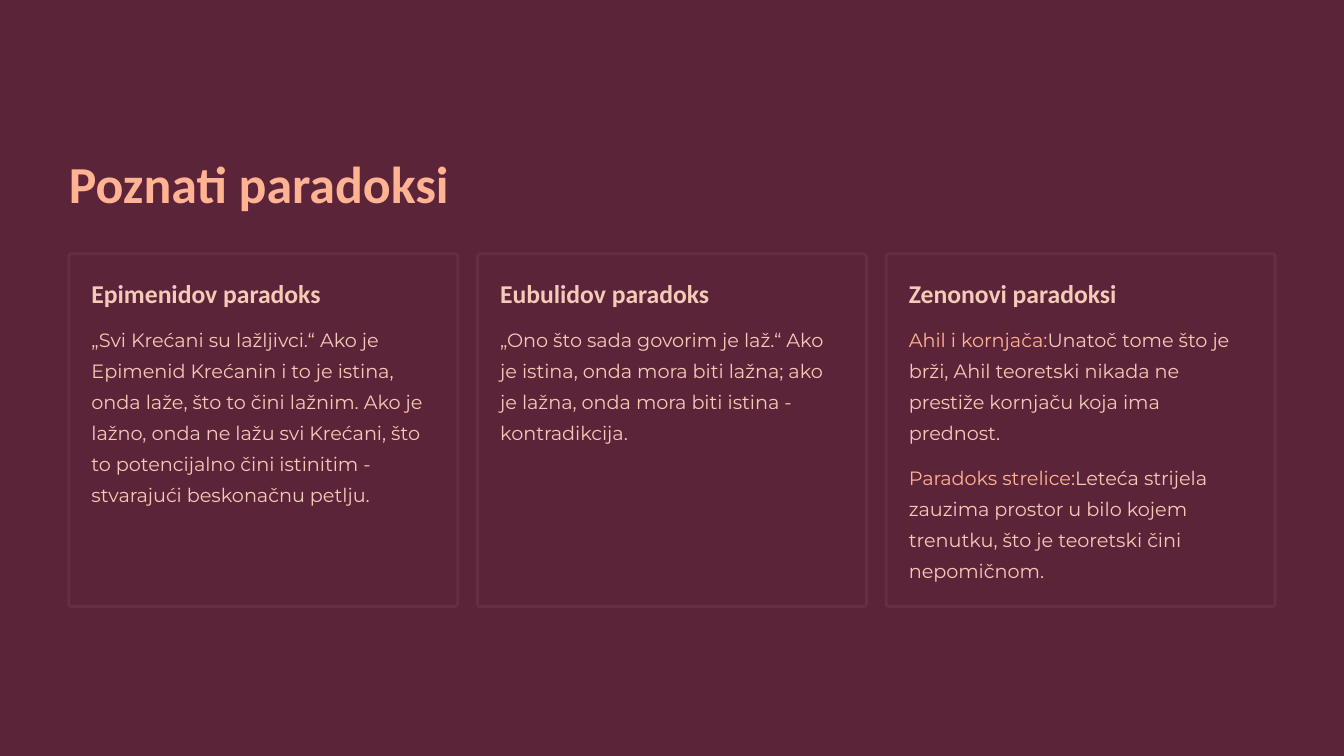
from dataclasses import dataclass

from pptx import Presentation
from pptx.dml.color import RGBColor
from pptx.enum.shapes import MSO_SHAPE as Shape
from pptx.enum.text import MSO_ANCHOR as Anchor, MSO_AUTO_SIZE as AutoSize, PP_ALIGN as Align
from pptx.slide import Slide
from pptx.text.text import TextFrame
from pptx.util import Pt

PLUM, BORDER, PEACH, CREAM = "5C2438", "662E42", "FFB393", "F4CAB8"
CARD_LEFT, CARD_TOP, CARD_WIDTH, CARD_HEIGHT = 59, 217.5, 333.4, 302.4
CARD_PITCH = 350.3
PADDING = 19.4


@dataclass(frozen=True)
class Style:
    font: str
    size: float
    bold: bool
    line: float
    color: str


@dataclass(frozen=True)
class Entry:
    text: str
    label: str = ""


@dataclass(frozen=True)
class Card:
    heading: str
    entries: tuple[Entry, ...]


TITLE = Style("Calibri", 44.5, True, 56, PEACH)
HEADING = Style("Calibri", 22, True, 28, CREAM)
BODY = Style("Montserrat", 16.5, False, 26.5, CREAM)

CARDS = (
    Card("Epimenidov paradoks", (
        Entry("„Svi Krećani su lažljivci.“ Ako je Epimenid Krećanin i to je istina, "
              "onda laže, što to čini lažnim. Ako je lažno, onda ne lažu svi Krećani, "
              "što to potencijalno čini istinitim - stvarajući beskonačnu petlju."),
    )),
    Card("Eubulidov paradoks", (
        Entry("„Ono što sada govorim je laž.“ Ako je istina, onda mora biti lažna; "
              "ako je lažna, onda mora biti istina - kontradikcija."),
    )),
    Card("Zenonovi paradoksi", (
        Entry("Unatoč tome što je brži, Ahil teoretski nikada ne prestiže kornjaču "
              "koja ima prednost.", "Ahil i kornjača:"),
        Entry("Leteća strijela zauzima prostor u bilo kojem trenutku, što je "
              "teoretski čini nepomičnom.", "Paradoks strelice:"),
    )),
)


def rgb(value: str) -> RGBColor:
    return RGBColor.from_string(value)


def fill_text(frame: TextFrame, entries: tuple[Entry, ...], style: Style, wrap: bool) -> None:
    settings = dict(margin_left=0, margin_top=0, margin_right=0, margin_bottom=0,
                    auto_size=AutoSize.NONE, vertical_anchor=Anchor.TOP, word_wrap=wrap)
    for name, value in settings.items():
        setattr(frame, name, value)
    for index, entry in enumerate(entries):
        para = frame.add_paragraph() if index else frame.paragraphs[0]
        para.alignment = Align.LEFT
        para.line_spacing = Pt(style.line)
        para.space_before = Pt(12 if index else 0)
        for text, color in ((entry.label, PEACH), (entry.text, style.color)):
            if not text:
                continue
            span = para.add_run()
            span.text = text
            for name, value in dict(name=style.font, size=Pt(style.size), bold=style.bold).items():
                setattr(span.font, name, value)
            span.font.color.rgb = rgb(color)


def add_card(page: Slide, card: Card, left: float) -> None:
    panel = page.shapes.add_shape(Shape.ROUNDED_RECTANGLE, Pt(left), Pt(CARD_TOP),
                                  Pt(CARD_WIDTH), Pt(CARD_HEIGHT))
    panel.adjustments[0] = 0.008
    panel.shadow.inherit = False
    panel.fill.solid()
    panel.fill.fore_color.rgb = rgb(PLUM)
    panel.line.color.rgb = rgb(BORDER)
    panel.line.width = Pt(2.4)

    text_left, text_width = Pt(left + PADDING), Pt(CARD_WIDTH - 2 * PADDING)
    heading = page.shapes.add_textbox(text_left, Pt(CARD_TOP + PADDING), text_width, Pt(28))
    fill_text(heading.text_frame, (Entry(card.heading),), HEADING, False)
    body = page.shapes.add_textbox(text_left, Pt(275), text_width, Pt(226))
    fill_text(body.text_frame, card.entries, BODY, True)


def main() -> None:
    deck = Presentation()
    deck.slide_width, deck.slide_height = Pt(1152), Pt(648)
    page = deck.slides.add_slide(deck.slide_layouts.get_by_name("Title Only"))
    page.background.fill.solid()
    page.background.fill.fore_color.rgb = rgb(PLUM)

    title = page.shapes.title
    for name, value in dict(left=CARD_LEFT, top=127.4, width=449.3, height=56).items():
        setattr(title, name, Pt(value))
    fill_text(title.text_frame, (Entry("Poznati paradoksi"),), TITLE, False)

    for index, card in enumerate(CARDS):
        add_card(page, card, CARD_LEFT + index * CARD_PITCH)
    deck.save("out.pptx")


if __name__ == "__main__":
    main()
